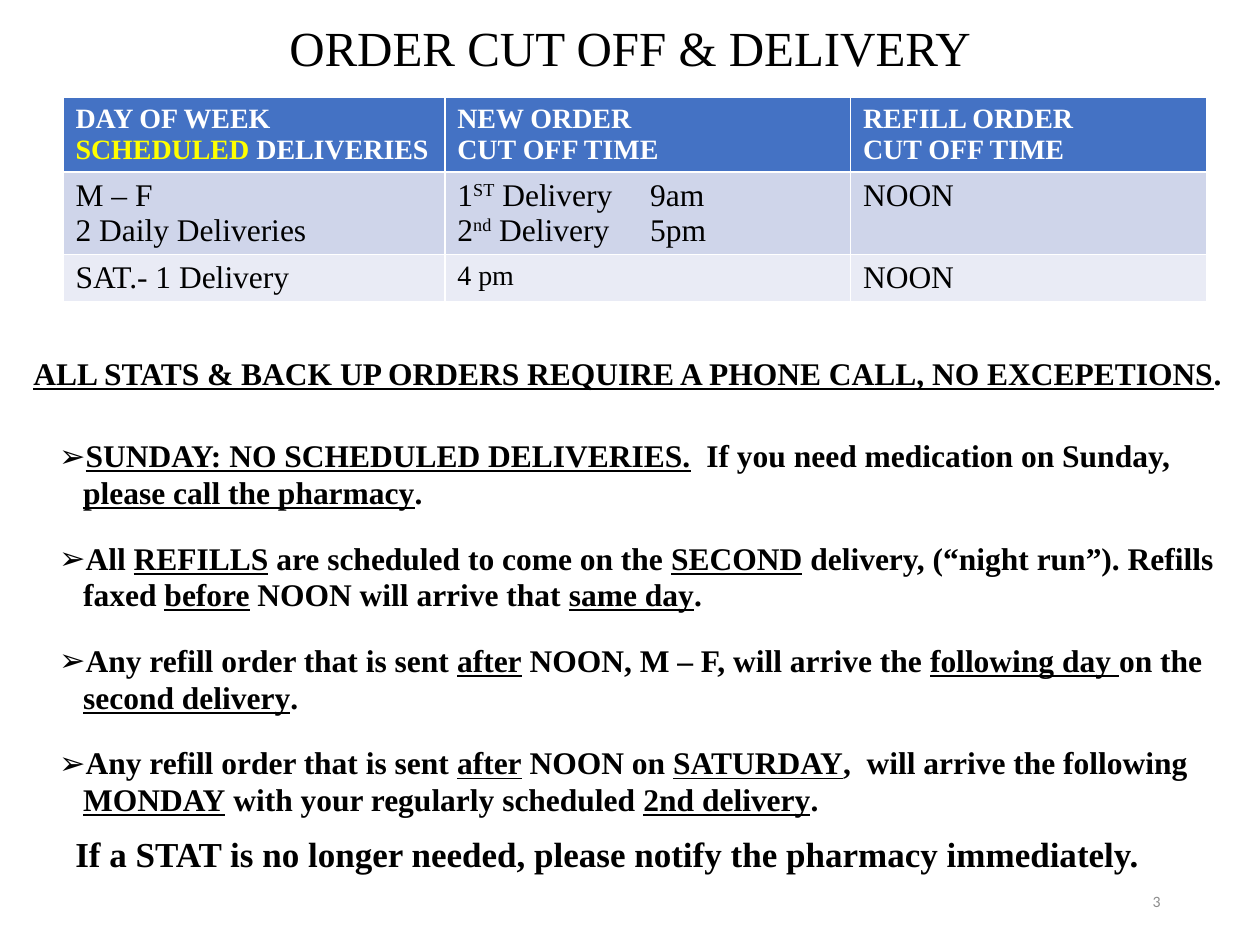
from pptx import Presentation
from pptx.util import Inches, Pt
from pptx.dml.color import RGBColor as RGB
from pptx.enum.text import PP_ALIGN as Align, MSO_ANCHOR as Anchor, MSO_AUTO_SIZE as Fit
from lxml.etree import SubElement as Sub
from pptx.oxml.ns import qn

INK = {"black": "000000", "white": "FFFFFF", "gold": "FFFF00", "gray": "8C8C8C",
       "head": "4472C4", "dark": "CFD5EA", "light": "E9EBF5"}


def write(par, text, size=18, font="Times New Roman", ink="black", bold=False,
          mark="line", align=None):
    par.alignment = align
    for i, part in enumerate(text.split("_")):
        if not part:
            continue
        run = par.add_run()
        run.text = part
        face = run.font
        face.name, face.size, face.bold = font, Pt(size), bold
        on = i % 2 == 1
        face.color.rgb = RGB.from_string(INK["gold" if on and mark == "gold" else ink])
        if on and mark == "line":
            face.underline = True
        if on and mark == "super":
            run._r.get_or_add_rPr().set("baseline", "30000")


def place(shape, left, top, width, height):
    shape.left, shape.top = Inches(left), Inches(top)
    shape.width, shape.height = Inches(width), Inches(height)
    frame = shape.text_frame
    frame.word_wrap = True
    frame.auto_size = Fit.NONE
    return frame


deck = Presentation()
deck.slide_width, deck.slide_height = Inches(10), Inches(7.5)
slide = deck.slides.add_slide(deck.slide_layouts[1])
shapes = slide.shapes

title = place(shapes.title, 0.5, 0.08, 9, 0.58)
title.vertical_anchor = Anchor.MIDDLE
write(title.paragraphs[0], "ORDER CUT OFF & DELIVERY", size=28, align=Align.CENTER)

rules = [
    "_SUNDAY: NO SCHEDULED DELIVERIES._  If you need medication on Sunday, "
    "_please call the pharmacy_.",
    "All _REFILLS_ are scheduled to come on the _SECOND_ delivery, (“night run”). "
    "Refills faxed _before_ NOON will arrive that _same day_.",
    "Any refill order that is sent _after_ NOON, M – F, will arrive the "
    "_following day _on the _second delivery_.",
    "Any refill order that is sent _after_ NOON on _SATURDAY_,  will arrive the "
    "following _MONDAY_ with your regularly scheduled _2nd delivery_.",
]
body = place(slide.placeholders[1], 0, 3.43, 9.92, 3.1)
for i, rule in enumerate(rules):
    par = body.paragraphs[0] if i == 0 else body.add_paragraph()
    par.level = 1
    par.line_spacing = 0.97
    par.space_before = Pt(16.6 if i else 0)
    write(par, rule, bold=True)
    props = par._p.get_or_add_pPr()
    props.set("marL", str(Inches(0.56)))
    props.set("indent", str(Inches(-0.19)))
    Sub(props, qn("a:buChar")).set("char", "➢")

rows = [
    ["DAY OF WEEK\n_SCHEDULED_ DELIVERIES", "NEW ORDER\nCUT OFF TIME",
     "REFILL ORDER\nCUT OFF TIME"],
    ["M – F\n2 Daily Deliveries", "1_ST_ Delivery\t9am\n2_nd_ Delivery\t5pm", "NOON"],
    ["SAT.- 1 Delivery", "4 pm", "NOON"],
]
grid = shapes.add_table(3, 3, Inches(0.5), Inches(0.77), Inches(9.08), Inches(1.62)).table
for col, width in zip(grid.columns, [3.03, 3.22, 2.83]):
    col.width = Inches(width)
for row, height in zip(grid.rows, [0.59, 0.65, 0.38]):
    row.height = Inches(height)
for r, (row, fill) in enumerate(zip(rows, ["head", "dark", "light"])):
    for c, text in enumerate(row):
        cell = grid.cell(r, c)
        cell.fill.solid()
        cell.fill.fore_color.rgb = RGB.from_string(INK[fill])
        for i, line in enumerate(text.split("\n")):
            frame = cell.text_frame
            par = frame.paragraphs[0] if i == 0 else frame.add_paragraph()
            write(par, line, size=16 if r == 0 or line == "4 pm" else 18,
                  ink="black" if r else "white", bold=r == 0,
                  mark="super" if r else "gold")
            if "\t" in line:
                stops = Sub(par._p.get_or_add_pPr(), qn("a:tabLst"))
                Sub(stops, qn("a:tab"), pos=str(Inches(1.53)), algn="l")

notes = [
    ((0, 2.76, 9.96, 0.4),
     "_ALL STATS & BACK UP ORDERS REQUIRE A PHONE CALL, NO EXCEPETIONS_.",
     dict(bold=True, align=Align.CENTER)),
    ((0.5, 6.56, 9, 0.44),
     "If a STAT is no longer needed, please notify the pharmacy immediately.",
     dict(size=20, bold=True)),
    ((7.06, 6.95, 2.25, 0.4), "3",
     dict(size=9, font="Calibri", ink="gray", align=Align.RIGHT)),
]
for spot, text, form in notes:
    frame = place(shapes.add_textbox(0, 0, 0, 0), *spot)
    frame.vertical_anchor = Anchor.MIDDLE if text == "3" else Anchor.TOP
    write(frame.paragraphs[0], text, **form)

deck.save("out.pptx")
